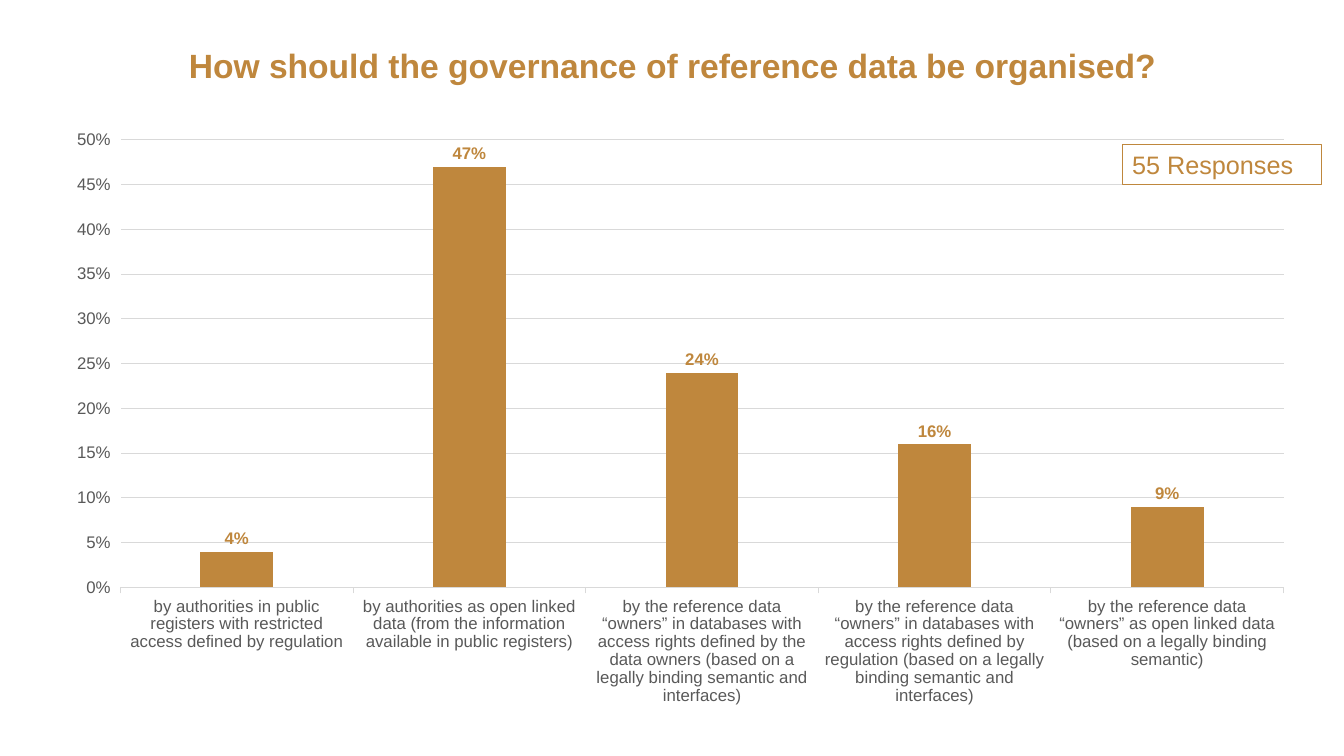
from lxml import etree
from pptx import Presentation
from pptx.chart.data import CategoryChartData
from pptx.dml.color import RGBColor
from pptx.enum.chart import XL_CHART_TYPE, XL_LABEL_POSITION as LabelPosition, XL_TICK_MARK as TickMark
from pptx.enum.shapes import MSO_SHAPE as Shape
from pptx.enum.text import MSO_ANCHOR as Anchor, PP_ALIGN as Align
from pptx.oxml.ns import qn
from pptx.util import Inches, Pt

GOLD, GREY, RULE = "BF873D", "595959", "D9D9D9"
ANSWERS = {
    "by authorities in public registers with restricted access defined by regulation": 0.04,
    "by authorities as open linked data (from the information available in public registers)": 0.47,
    "by the reference data “owners” in databases with access rights defined by the data owners "
    "(based on a legally binding semantic and interfaces)": 0.24,
    "by the reference data “owners” in databases with access rights defined by regulation "
    "(based on a legally binding semantic and interfaces)": 0.16,
    "by the reference data “owners” as open linked data (based on a legally binding semantic)": 0.09,
}


def color(hex_string):
    """Turn a hex string into a colour."""
    return RGBColor.from_string(hex_string)


def style_font(font, size, hex_string, bold=False):
    """Set the typeface, size, colour and weight of a font."""
    font.name, font.size, font.bold = "Arial", Pt(size), bold
    font.color.rgb = color(hex_string)


def style_line(line, hex_string):
    """Give a line its colour and a thin width."""
    line.color.rgb = color(hex_string)
    line.width = Pt(0.75)


def write_text(shape, text, size, align, bold=False):
    """Write one gold paragraph into a shape."""
    frame = shape.text_frame
    frame.word_wrap = True
    frame.vertical_anchor = Anchor.MIDDLE
    frame.text = text
    para = frame.paragraphs[0]
    para.alignment = align
    style_font(para.runs[0].font, size, GOLD, bold)


def add_title(slide, box, text):
    """Place the centred heading in its box."""
    title = slide.shapes.add_textbox(*map(Inches, box))
    write_text(title, text, 24, Align.CENTER, bold=True)


def add_response_count(slide, box, text):
    """Place the outlined count of responses in its box."""
    badge = slide.shapes.add_shape(Shape.RECTANGLE, *map(Inches, box))
    badge.shadow.inherit = False
    badge.fill.background()
    style_line(badge.line, GOLD)
    write_text(badge, text, 18, Align.LEFT)


def set_plot_layout(chart, **fractions):
    """Fix the inner plot area as fractions of the chart box."""
    plot_area = chart.plots[0]._element.getparent()
    for old in plot_area.findall(qn("c:layout")):
        plot_area.remove(old)
    layout = etree.Element(qn("c:layout"))
    plot_area.insert(0, layout)
    manual = etree.SubElement(layout, qn("c:manualLayout"))
    settings = {"layoutTarget": "inner", "xMode": "edge", "yMode": "edge", **fractions}
    for name, value in settings.items():
        etree.SubElement(manual, qn(f"c:{name}")).set("val", str(value))


def add_answer_chart(slide, box, answers):
    """Place the column chart of answer shares in its box."""
    data = CategoryChartData(number_format="0%")
    data.categories = list(answers)
    data.add_series("Series 1", list(answers.values()))
    chart = slide.shapes.add_chart(XL_CHART_TYPE.COLUMN_CLUSTERED, *map(Inches, box), data).chart
    chart.has_legend = chart.has_title = False
    style_font(chart.font, 10, "000000")
    set_plot_layout(chart, x=0.055, y=0.035, w=0.925, h=0.749)

    plot = chart.plots[0]
    plot.gap_width, plot.overlap, plot.vary_by_categories = 219, -27, False
    series = plot.series[0]
    series.format.fill.solid()
    series.format.fill.fore_color.rgb = color(GOLD)
    labels = series.data_labels
    labels.show_value = True
    labels.position = LabelPosition.OUTSIDE_END
    labels.number_format, labels.number_format_is_linked = "0%", False
    style_font(labels.font, 12, GOLD, bold=True)

    categories, shares = chart.category_axis, chart.value_axis
    for axis in (categories, shares):
        style_font(axis.tick_labels.font, 12, GREY)
        axis.minor_tick_mark = TickMark.NONE
    categories.major_tick_mark = TickMark.OUTSIDE
    style_line(categories.format.line, RULE)
    shares.major_tick_mark = TickMark.OUTSIDE
    shares.format.line.fill.background()
    shares.minimum_scale, shares.maximum_scale, shares.major_unit = 0, 0.5, 0.05
    shares.tick_labels.number_format = "0%"
    shares.tick_labels.number_format_is_linked = False
    style_line(shares.major_gridlines.format.line, RULE)


def main():
    """Build the slide and save the deck."""
    deck = Presentation()
    deck.slide_width, deck.slide_height = Inches(13.33), Inches(7.5)
    slide = deck.slides.add_slide(deck.slide_layouts[6])
    add_title(slide, (1.6, 0.4, 10.14, 0.5), "How should the governance of reference data be organised?")
    add_answer_chart(slide, (0.51, 1.18, 12.47, 5.93), ANSWERS)
    add_response_count(slide, (11.13, 1.43, 1.98, 0.4), "55 Responses")
    deck.save("out.pptx")


if __name__ == "__main__":
    main()
